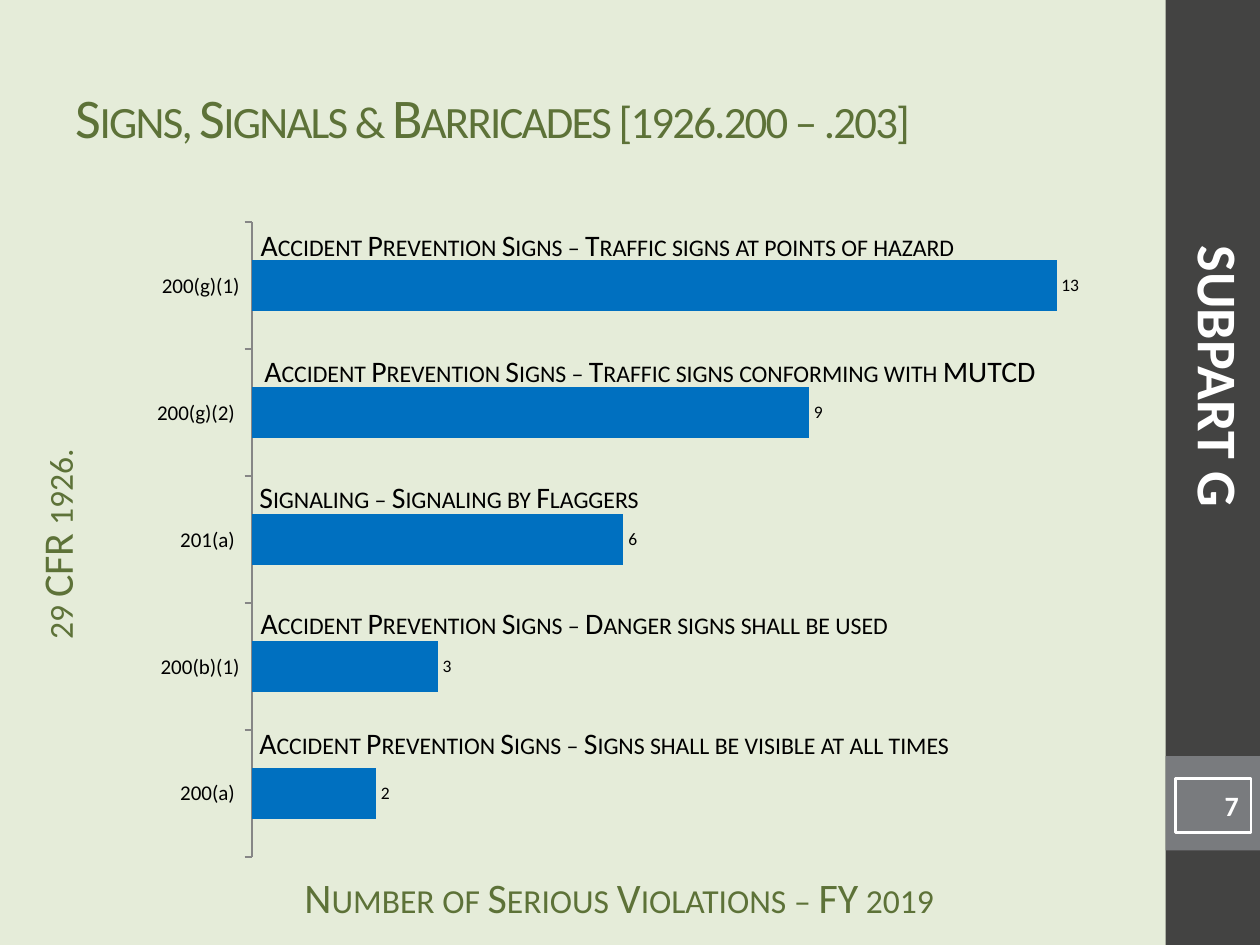
from lxml import etree
from pptx import Presentation
from pptx.chart.data import CategoryChartData
from pptx.dml.color import RGBColor
from pptx.enum.chart import XL_CHART_TYPE, XL_LABEL_POSITION, XL_TICK_LABEL_POSITION, XL_TICK_MARK
from pptx.enum.shapes import MSO_SHAPE
from pptx.enum.text import MSO_ANCHOR, MSO_AUTO_SIZE, PP_ALIGN
from pptx.oxml.ns import qn
from pptx.util import Inches, Pt

RECTANGLE = MSO_SHAPE.RECTANGLE
BAR = XL_CHART_TYPE.BAR_CLUSTERED
OUTSIDE_END = XL_LABEL_POSITION.OUTSIDE_END
TICK_OUT, TICK_NONE = XL_TICK_MARK.OUTSIDE, XL_TICK_MARK.NONE
LABELS_LOW = XL_TICK_LABEL_POSITION.LOW
LEFT, CENTER, RIGHT = PP_ALIGN.LEFT, PP_ALIGN.CENTER, PP_ALIGN.RIGHT
TOP, MIDDLE = MSO_ANCHOR.TOP, MSO_ANCHOR.MIDDLE
NO_FIT, GROW = MSO_AUTO_SIZE.NONE, MSO_AUTO_SIZE.SHAPE_TO_FIT_TEXT

THEME = {
    "font": "Calibri",
    "background": RGBColor.from_string("E5ECD9"),
    "sidebar": RGBColor.from_string("434342"),
    "number_band": RGBColor.from_string("797B7E"),
    "heading": RGBColor.from_string("5D7238"),
    "bar": RGBColor.from_string("0070C0"),
    "axis": RGBColor.from_string("868686"),
    "black": RGBColor.from_string("000000"),
    "white": RGBColor.from_string("FFFFFF"),
    "title_size": Pt(32),
    "axis_title_size": Pt(24),
    "violation_size": Pt(17),
    "number_size": Pt(16),
    "category_size": Pt(12),
    "value_size": Pt(10),
}


def write(box, text, size, color, align=LEFT, bold=False, small_caps=False, spacing=None, **frame_format):
    frame = box.text_frame
    for attribute, value in frame_format.items():
        setattr(frame, attribute, value)
    paragraph = frame.paragraphs[0]
    paragraph.alignment = align
    run = paragraph.add_run()
    run.text = text
    run.font.name = THEME["font"]
    run.font.size = THEME[size]
    run.font.bold = bold
    run.font.color.rgb = THEME[color]
    properties = run._r.get_or_add_rPr()
    if small_caps:
        properties.set("cap", "small")
    if spacing:
        properties.set("spc", str(spacing))


def add_panel(left, top, width, height, fill=None):
    panel = slide.shapes.add_shape(RECTANGLE, Inches(left), Inches(top), Inches(width), Inches(height))
    panel.shadow.inherit = False
    panel.line.fill.background()
    if fill:
        panel.fill.solid()
        panel.fill.fore_color.rgb = THEME[fill]
    else:
        panel.fill.background()
    return panel


deck = Presentation()
deck.slide_width, deck.slide_height = Inches(10), Inches(7.5)
slide = deck.slides.add_slide(deck.slide_layouts[5])
slide.background.fill.solid()
slide.background.fill.fore_color.rgb = THEME["background"]

add_panel(9.25, 0, 0.75, 7.5, "sidebar")
add_panel(9.25, 6, 0.75, 0.75, "number_band")

axis_titles = [
    ("Number of Serious Violations – FY 2019", 2.08, 6.92, 5.67, 0.33, 0),
    ("29 CFR 1926.", -1.56, 4.03, 4.19, 0.58, 270),
]
for text, left, top, width, height, rotation in axis_titles:
    axis_title = slide.shapes.add_textbox(Inches(left), Inches(top), Inches(width), Inches(height))
    axis_title.rotation = rotation
    write(axis_title, text, "axis_title_size", "heading", CENTER, small_caps=True,
          word_wrap=True, margin_top=0, vertical_anchor=TOP)

violations = CategoryChartData()
violations.categories = ["200(a) ", "200(b)(1)", "201(a) ", "200(g)(2) ", "200(g)(1)"]
violations.add_series("Series 1", [2, 3, 6, 9, 13])
chart = slide.shapes.add_chart(BAR, Inches(1.08), Inches(1.67), Inches(7.94), Inches(5.25), violations).chart
chart.has_legend = False
chart.has_title = False
chart.font.name = THEME["font"]
chart.font.size = THEME["value_size"]
chart.font.color.rgb = THEME["black"]

sections = chart.category_axis
sections.major_tick_mark = TICK_OUT
sections.minor_tick_mark = TICK_NONE
sections.tick_label_position = LABELS_LOW
sections.tick_labels.font.size = THEME["category_size"]
sections.format.line.color.rgb = THEME["axis"]
sections.format.line.width = Pt(1)
counts = chart.value_axis
counts.visible = False
counts.has_major_gridlines = False
counts.minimum_scale, counts.maximum_scale = 0, 14

bars = chart.plots[0]
bars.gap_width = 150
bars.vary_by_categories = False
bars.series[0].format.fill.solid()
bars.series[0].format.fill.fore_color.rgb = THEME["bar"]
bars.has_data_labels = True
bars.data_labels.show_value = True
bars.data_labels.position = OUTSIDE_END
bars.data_labels.font.size = THEME["value_size"]

plot_area = chart._chartSpace.find(".//" + qn("c:plotArea"))
for old_layout in plot_area.findall(qn("c:layout")):
    plot_area.remove(old_layout)
layout = etree.Element(qn("c:layout"))
plot_area.insert(0, layout)
manual = etree.SubElement(layout, qn("c:manualLayout"))
plot_place = {"layoutTarget": "inner", "xMode": "edge", "yMode": "edge",
              "x": "0.116", "y": "0.018", "w": "0.866", "h": "0.96"}
for tag, value in plot_place.items():
    etree.SubElement(manual, qn("c:" + tag)).set("val", value)

title = slide.shapes.title
title.left, title.top, title.width, title.height = Inches(0.5), Inches(0.3), Inches(8.33), Inches(1.25)
write(title, "Signs, Signals & Barricades [1926.200 – .203]", "title_size", "heading",
      small_caps=True, spacing=-100, vertical_anchor=MIDDLE, auto_size=NO_FIT, word_wrap=True)

page_number = add_panel(9.33, 6.18, 0.6, 0.43)
page_number.line.color.rgb = THEME["white"]
page_number.line.width = Pt(1.5)
write(page_number, "7", "number_size", "white", RIGHT, bold=True, vertical_anchor=MIDDLE)

violation_names = [
    ("Accident Prevention Signs – Traffic signs at points of hazard", 1.97, 1.75, 5.98),
    ("Accident Prevention Signs – Traffic signs conforming with MUTCD", 2, 2.75, 6.5),
    ("Signaling – Signaling by Flaggers", 1.96, 3.75, 3.31),
    ("Accident Prevention Signs – Danger signs shall be used", 1.97, 4.75, 5.35),
    ("Accident Prevention Signs – Signs shall be visible at all times", 1.96, 5.7, 5.87),
]
for text, left, top, width in violation_names:
    violation = slide.shapes.add_textbox(Inches(left), Inches(top), Inches(width), Inches(0.39))
    write(violation, text, "violation_size", "black", small_caps=True, word_wrap=False, auto_size=GROW)

subpart = slide.shapes.add_textbox(Inches(6.69), Inches(2.67), Inches(5.98), Inches(0.64))
subpart.rotation = 90
write(subpart, "SUBPART G", "title_size", "white", CENTER, bold=True, word_wrap=True, auto_size=GROW)

deck.save("out.pptx")
